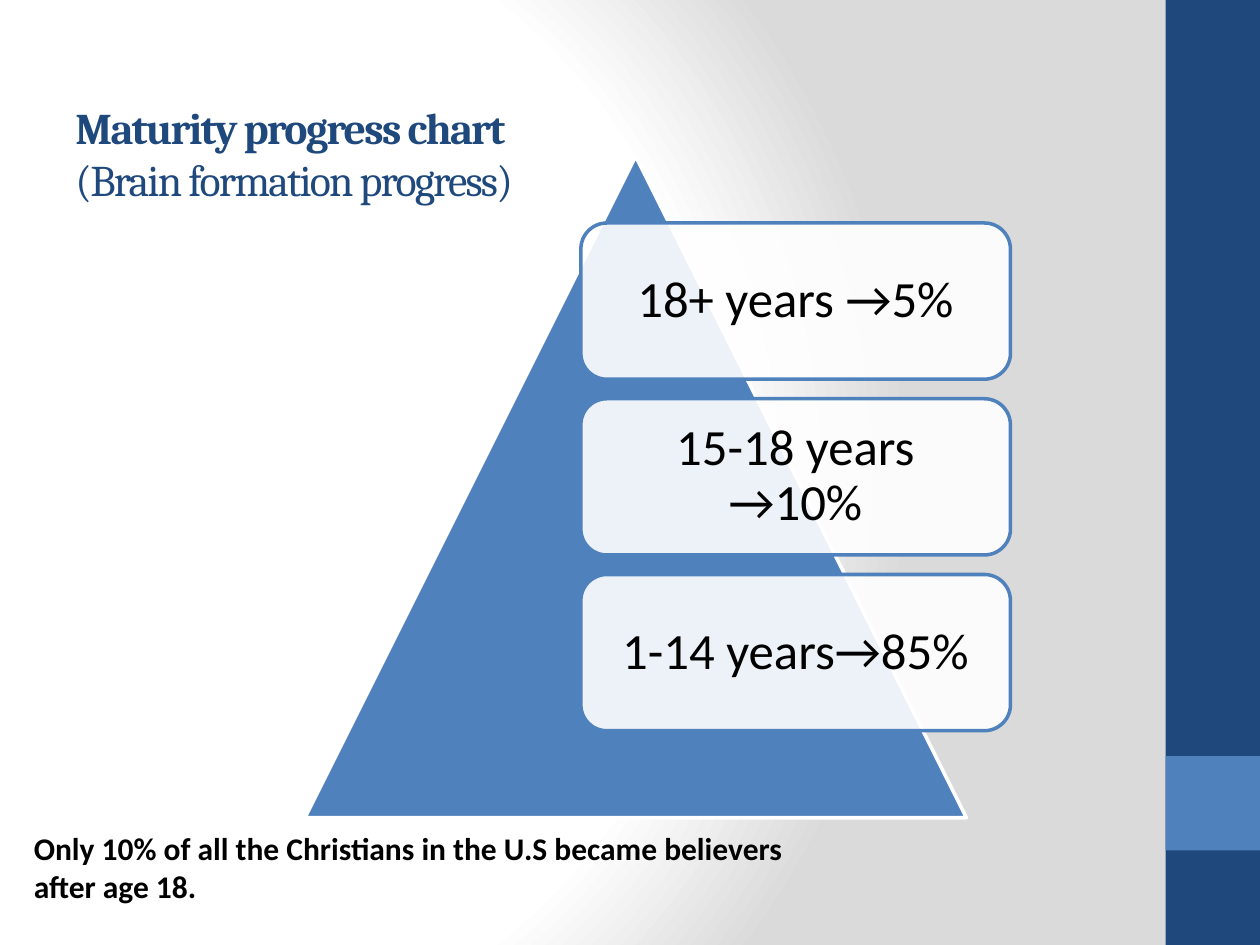
from pptx import Presentation
from pptx.dml.color import RGBColor
from pptx.enum.shapes import MSO_SHAPE as Shape
from pptx.enum.text import MSO_ANCHOR as Anchor, PP_ALIGN as Align
from pptx.oxml import parse_xml
from pptx.oxml.ns import nsdecls, qn
from pptx.util import Inches, Pt

COLORS = {
    "navy": "1F497D",
    "blue": "4F81BD",
    "white": "FFFFFF",
    "gray": "DADADA",
    "black": "000000",
}
STAGES = ["18+ years →5%", "15-18 years →10%", "1-14 years→85%"]
STAGE_TOP, STAGE_STEP = 1.77, 1.395


def rgb(name):
    return RGBColor.from_string(COLORS[name])


def set_background(page):
    """Fill the page with a round gradient from white to gray."""
    page.background.fill.gradient()
    old = page.element.find(".//" + qn("a:gradFill"))
    stops = "".join(
        f'<a:gs pos="{percent * 1000}"><a:srgbClr val="{COLORS[name]}"/></a:gs>'
        for percent, name in [(0, "white"), (75, "white"), (100, "gray")]
    )
    old.getparent().replace(old, parse_xml(
        f'<a:gradFill {nsdecls("a")} rotWithShape="1"><a:gsLst>{stops}</a:gsLst>'
        '<a:path path="circle"><a:fillToRect l="20000" t="50000" r="100000" b="50000"/>'
        "</a:path></a:gradFill>"
    ))


def add_shape(page, kind, left, top, width, height, fill, line=None, opacity=None):
    shape = page.shapes.add_shape(
        kind, Inches(left), Inches(top), Inches(width), Inches(height))
    shape.shadow.inherit = False
    shape.fill.solid()
    shape.fill.fore_color.rgb = rgb(fill)
    if opacity is not None:
        color = shape.element.spPr.find(qn("a:solidFill"))[0]
        color.append(parse_xml(f'<a:alpha {nsdecls("a")} val="{opacity * 1000}"/>'))
    if line:
        shape.line.color.rgb = rgb(line)
        shape.line.width = Pt(2)
    else:
        shape.line.fill.background()
    return shape


def add_text_box(page, left, top, width, height):
    return page.shapes.add_textbox(
        Inches(left), Inches(top), Inches(width), Inches(height))


def write(box, lines, size, color, font="Calibri", bold=(False,), anchor=Anchor.TOP,
          align=Align.LEFT, inset=None, line_spacing=None, tracking=None):
    """Write one paragraph per line; bold has one flag for each line."""
    frame = box.text_frame
    frame.word_wrap = True
    frame.vertical_anchor = anchor
    if inset is not None:
        frame.margin_left = frame.margin_right = Inches(inset)
        frame.margin_top = frame.margin_bottom = Inches(inset)
    for index, (line, heavy) in enumerate(zip(lines, bold)):
        para = frame.add_paragraph() if index else frame.paragraphs[0]
        para.alignment = align
        if line_spacing:
            para.line_spacing = line_spacing
        span = para.add_run()
        span.text = line
        span.font.name = font
        span.font.size = Pt(size)
        span.font.bold = heavy
        span.font.color.rgb = rgb(color)
        if tracking:
            span.font._element.set("spc", str(tracking * 100))


def add_stage(page, text, top):
    card = add_shape(page, Shape.ROUNDED_RECTANGLE, 4.61, top, 3.41, 1.24,
                     "white", line="blue", opacity=90)
    write(card, [text], size=29, color="black", anchor=Anchor.MIDDLE,
          align=Align.CENTER, inset=0.18, line_spacing=0.9)


def main():
    deck = Presentation()
    deck.slide_width, deck.slide_height = Inches(10), Inches(7.5)
    page = deck.slides.add_slide(deck.slide_layouts[6])
    set_background(page)

    add_shape(page, Shape.RECTANGLE, 9.25, 0, 0.75, 7.5, "navy")
    add_shape(page, Shape.RECTANGLE, 9.25, 6, 0.75, 0.75, "blue")

    title = add_text_box(page, 0.5, 0.75, 8.33, 1.25)
    write(title, ["Maturity progress chart", "(Brain formation progress)"], size=25,
          color="navy", font="Cambria", bold=(True, False), tracking=-1)

    add_shape(page, Shape.ISOSCELES_TRIANGLE, 2.42, 1.24, 5.25, 5.25,
              "blue", line="white")
    for index, text in enumerate(STAGES):
        add_stage(page, text, STAGE_TOP + index * STAGE_STEP)

    note = add_text_box(page, 0.17, 6.53, 6.67, 1.01)
    write(note, ["Only 10% of all the Christians in the U.S became believers after age 18."],
          size=18, color="black", bold=(True,))

    deck.save("out.pptx")


if __name__ == "__main__":
    main()
